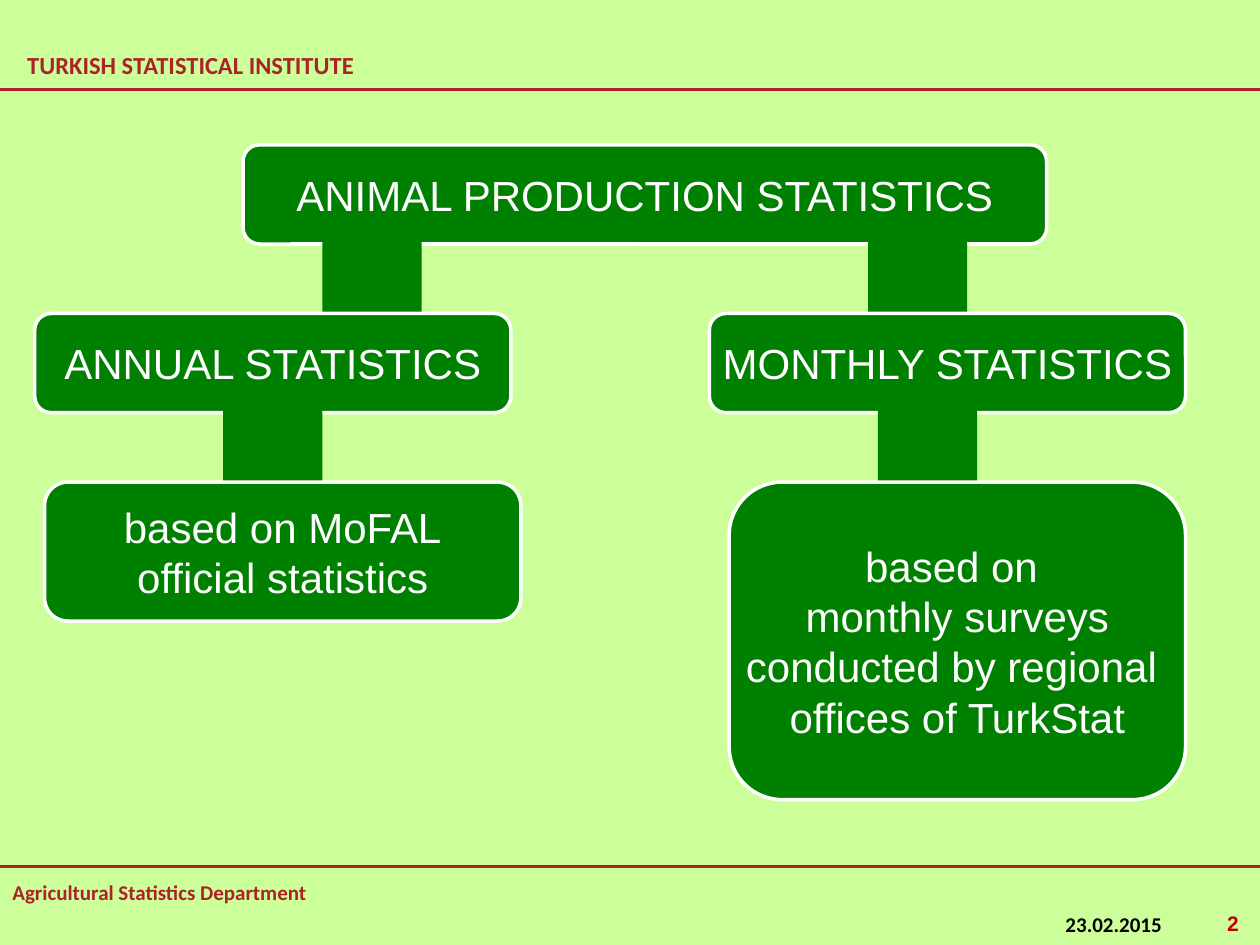
from lxml import etree
from pptx import Presentation
from pptx import util as u
from pptx.dml.color import RGBColor
from pptx.enum import shapes, text
from pptx.oxml import ns

HUES = {"back": "CCFF99", "box": "008000", "edge": "FFFFFF",
        "brand": "AB2328", "date": "000000", "page": "C00000"}
WIDE, HIGH = 25.4, 19.05
DROP, LAP = 1.6, 0.2


def hue(name):
    """Return the named colour."""
    return RGBColor.from_string(HUES[name])


def write(frame, lines, size, font, tint, align, bold=False):
    """Fill a text frame with one paragraph per line."""
    frame.vertical_anchor = text.MSO_ANCHOR.MIDDLE
    for i, line in enumerate(lines):
        para = frame.paragraphs[0] if i == 0 else frame.add_paragraph()
        para.alignment = align
        run = para.add_run()
        run.text = line
        run.font.size = u.Pt(size)
        run.font.name = font
        run.font.bold = bold
        run.font.color.rgb = hue(tint)


def label(slide, box, words, size, font, tint, align=text.PP_ALIGN.LEFT):
    """Add a bold one-line text box."""
    item = slide.shapes.add_textbox(*map(u.Cm, box))
    item.text_frame.word_wrap = True
    write(item.text_frame, [words], size, font, tint, align, True)


def rule(slide, y):
    """Draw a rule across the slide."""
    line = slide.shapes.add_connector(
        shapes.MSO_CONNECTOR.STRAIGHT, 0, u.Cm(y), u.Cm(WIDE), u.Cm(y))
    line.line.color.rgb = hue("brand")
    line.line.width = u.Pt(1.5)
    etree.SubElement(line._element.spPr, ns.qn("a:effectLst"))


def block(slide, kind, box):
    """Add a green shape without outline."""
    item = slide.shapes.add_shape(kind, *map(u.Cm, box))
    item.shadow.inherit = False
    item.fill.solid()
    item.fill.fore_color.rgb = hue("box")
    item.line.fill.background()
    return item


def node(slide, box, lines):
    """Add a rounded box with centred text."""
    item = block(slide, shapes.MSO_SHAPE.ROUNDED_RECTANGLE, box)
    item.line.color.rgb = hue("edge")
    item.line.width = u.Pt(2)
    item.text_frame.word_wrap = False
    write(item.text_frame, lines, 24, "Arial", "edge", text.PP_ALIGN.CENTER)


def stem(slide, x, y):
    """Hang a stem below a box bottom and return the next box top."""
    block(slide, shapes.MSO_SHAPE.RECTANGLE, (x, y - LAP, 2, DROP + LAP))
    return y - LAP + DROP


def branch(slide, y, head, leaf, stems):
    """Place a heading box and its detail box, each under a stem."""
    for (x, wide, high, lines), at in zip((head, leaf), stems):
        top = stem(slide, at, y)
        node(slide, (x, top, wide, high), lines)
        y = top + high


def tree(slide, box):
    """Place the root box and its two branches."""
    x, y, wide, high = box
    node(slide, box, ["ANIMAL PRODUCTION STATISTICS"])
    base = y + high
    branch(slide, base,
           (x - 4.2, 9.6, 2, ["ANNUAL STATISTICS"]),
           (x - 4, 9.6, 2.8, ["based on MoFAL", "official statistics"]),
           (x + 1.6, x - 0.4))
    branch(slide, base,
           (x + 9.4, 9.6, 2, ["MONTHLY STATISTICS"]),
           (x + 9.8, 9.2, 6.4, ["based on ", "monthly surveys",
                                "conducted by regional ",
                                "offices of TurkStat"]),
           (x + 12.6, x + 12.8))


def header(slide, y):
    """Place the institute name above its rule."""
    label(slide, (0.3, y - 1, 9, 1), "TURKISH STATISTICAL INSTITUTE",
          14, "Calibri", "brand")
    rule(slide, y)


def footer(slide, y):
    """Place the rule, department, date and page number."""
    rule(slide, y)
    label(slide, (0, y + 0.13, 10.9, 0.76), "Agricultural Statistics Department",
          12, "Calibri", "brand")
    label(slide, (21.23, y + 0.79, 4, 0.76), "23.02.2015",
          12, "Calibri", "date")
    label(slide, (19.3, y + 0.75, 5.92, 0.76), "2",
          12, "Arial", "page", text.PP_ALIGN.RIGHT)


def main():
    """Build and save the slide."""
    deck = Presentation()
    deck.slide_width, deck.slide_height = u.Cm(WIDE), u.Cm(HIGH)
    slide = deck.slides.add_slide(deck.slide_layouts[6])
    slide.background.fill.solid()
    slide.background.fill.fore_color.rgb = hue("back")
    header(slide, 1.8)
    footer(slide, 17.47)
    tree(slide, (4.9, 2.92, 16.2, 2))
    deck.save("out.pptx")


if __name__ == "__main__":
    main()
